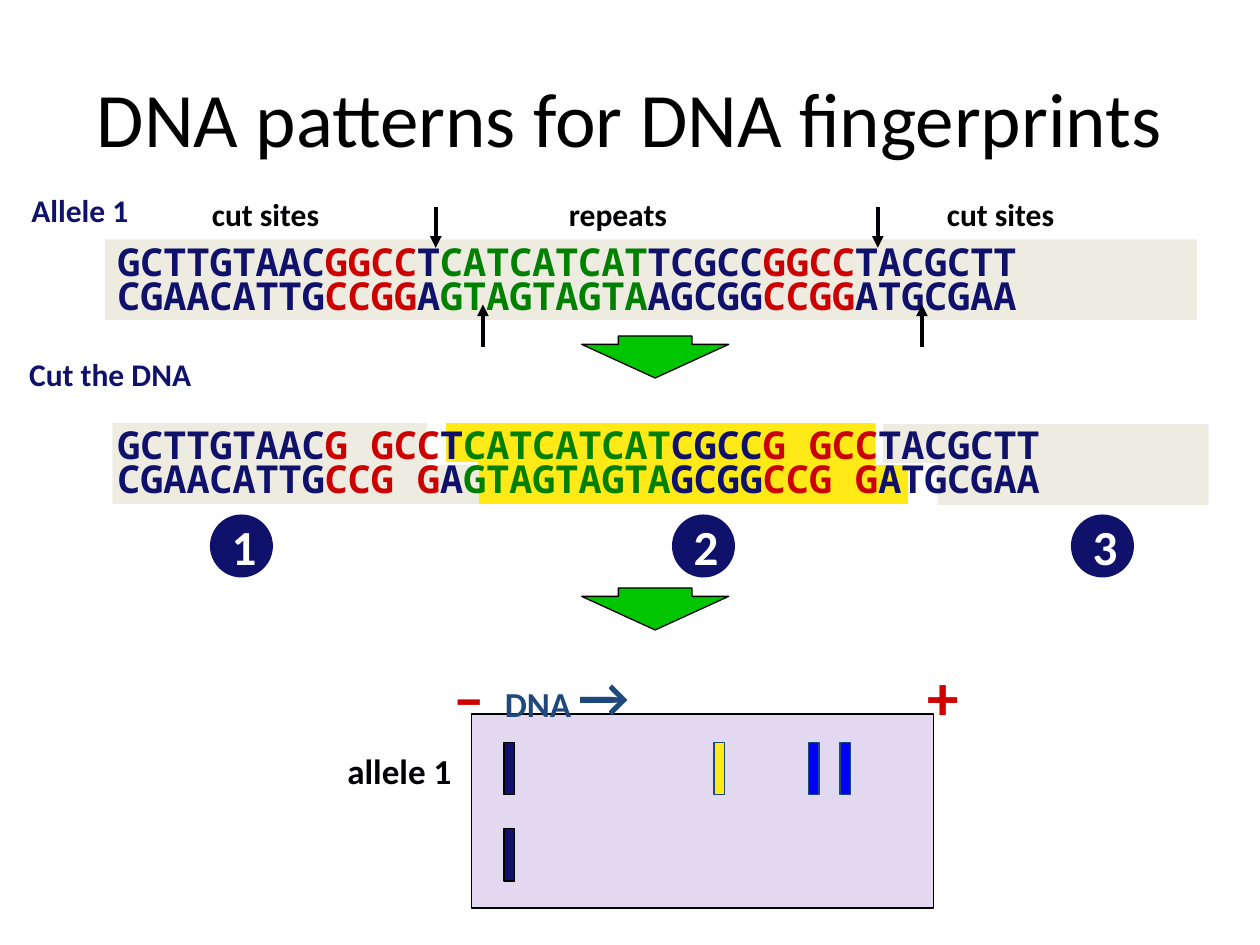
from lxml.etree import SubElement
from pptx import Presentation
from pptx.dml.color import RGBColor
from pptx.enum.shapes import MSO_CONNECTOR, MSO_SHAPE as SHAPE
from pptx.enum.text import MSO_ANCHOR, MSO_AUTO_SIZE as FIT, PP_ALIGN
from pptx.oxml.ns import qn
from pptx.util import Inches, Pt

COLS, ROWS = 120, 90
CELL = Inches(10) // COLS
NAVY, RED, GREEN, BLACK, BLUE = "0F116A", "CC0000", "008000", "000005", "1F497D"
WHITE, BEIGE, YELLOW = "FFFFFF", "EEECE1", "FFEA18"
STRAND_COLOURS = [NAVY, RED, NAVY, GREEN, NAVY, RED, NAVY]


def rgb(value):
    return RGBColor.from_string(value)


def grid(*units):
    return [round(u * CELL) for u in units]


def inside(box, x, y, w, h):
    return box[0] + x, box[1] + y, w, h


def add_run(p, text, size, colour, font="Calibri", bold=True):
    r = p.add_run()
    r.text = text
    r.font.size, r.font.name, r.font.bold = Pt(size), font, bold
    r.font.color.rgb = rgb(colour)


def frame(sp, wrap=True, fit=True):
    tf = sp.text_frame
    tf.word_wrap = wrap
    tf.auto_size = FIT.SHAPE_TO_FIT_TEXT if fit else FIT.NONE
    tf.vertical_anchor = MSO_ANCHOR.MIDDLE
    tf.paragraphs[0].alignment = PP_ALIGN.LEFT
    return tf


def add_shape(slide, box, fill, line=None, kind=SHAPE.RECTANGLE):
    sp = slide.shapes.add_shape(kind, *grid(*box))
    sp.shadow.inherit = False
    sp.fill.solid()
    sp.fill.fore_color.rgb = rgb(fill)
    if line:
        sp.line.color.rgb = rgb(line)
        sp.line.width = Pt(0.75)
    else:
        sp.line.fill.background()
    return sp


def add_label(slide, box, runs, wrap=True):
    tf = frame(slide.shapes.add_textbox(*grid(*box)), wrap)
    for text, size, colour in runs:
        add_run(tf.paragraphs[0], text, size, colour)


def add_heading(slide, box, text):
    tf = frame(add_shape(slide, box, WHITE), wrap=False)
    add_run(tf.paragraphs[0], text, 18, NAVY)


def add_strands(slide, box, strands):
    tf = frame(slide.shapes.add_textbox(*grid(*box)))
    for i, strand in enumerate(strands):
        p = tf.add_paragraph() if i else tf.paragraphs[0]
        p.line_spacing = 0.5
        p.space_after = Pt(0 if i else 6)
        for text, colour in zip(strand.split("|"), STRAND_COLOURS):
            add_run(p, text, 22, colour, "Noto Sans Mono")


def add_cut(slide, x, start, end):
    c = slide.shapes.add_connector(MSO_CONNECTOR.STRAIGHT, *grid(x, start, x, end))
    c.line.color.rgb = rgb(BLACK)
    c.line.width = Pt(2.25)
    SubElement(c.line._get_or_add_ln(), qn("a:tailEnd"), type="triangle")
    SubElement(c._element.spPr, qn("a:effectLst"))


def add_step_arrow(slide, box):
    sp = add_shape(slide, box, "00C602", "000000", SHAPE.DOWN_ARROW)
    sp.adjustments[0], sp.adjustments[1] = 0.5, 0.8


def add_title(slide, box, text):
    title = slide.shapes.title
    title.left, title.top, title.width, title.height = grid(*box)
    tf = frame(title, fit=False)
    p = tf.paragraphs[0]
    p.alignment = PP_ALIGN.CENTER
    add_run(p, text, 44, "000000", bold=False)


def add_allele(slide, box):
    add_heading(slide, inside(box, 0, 0, 16.4, 6), "Allele 1")
    add_shape(slide, inside(box, 8.2, 5.8, 104, 7.7), BEIGE)
    add_strands(slide, inside(box, 8.2, 7, 105, 6.6), [
        "GCTTGTAAC|GGCC|T|CATCATCAT|TCGCC|GGCC|TACGCTT",
        "CGAACATTG|CCGG|A|GTAGTAGTA|AGCGG|CCGG|ATGCGAA"])
    for x, w, text in [(17.2, 17, "cut sites"), (51.2, 15, "repeats"),
                       (87.2, 15, "cut sites")]:
        add_label(slide, inside(box, x, 1, w, 4.8), [(text, 18, BLACK)])
    top, bottom = (box[1] + 2.7, box[1] + 6.6), (box[1] + 16, box[1] + 12)
    for x, ends in [(39.7, top), (44.2, bottom), (81.8, top), (86, bottom)]:
        add_cut(slide, box[0] + x, *ends)


def add_fragments(slide, box):
    add_heading(slide, inside(box, 0, 0, 25.9, 6), "Cut the DNA")
    full, half, upper, lower = 7.7, 3.7, 7.7, 11.7
    for x, y, w, h, fill in [
            (43.9, upper, 37.9, full, YELLOW), (40.9, upper, 9.1, half, YELLOW),
            (75.7, lower, 9.2, half, YELLOW), (9.1, upper, 30, full, BEIGE),
            (29, lower, 15, half, BEIGE), (87.7, upper + 0.1, 25.8, full, BEIGE),
            (82.5, upper + 0.1, 15.5, half, BEIGE)]:
        add_shape(slide, inside(box, x, y, w, h), fill)
    add_strands(slide, inside(box, 8.4, 8.8, 105, 6.6), [
        "GCTTGTAAC|G GCC|T|CATCATCAT|CGCC|G GCC|TACGCTT",
        "CGAACATTG|CCG G|A|GTAGTAGTA|GCGG|CCG G|ATGCGAA"])
    for number, x in enumerate([18.4, 62.4, 100.4], 1):
        sp = add_shape(slide, inside(box, x, 16.4, 6, 6), NAVY, kind=SHAPE.OVAL)
        add_run(frame(sp, wrap=False, fit=False).paragraphs[0], str(number), 28, WHITE)


def add_gel(slide, box):
    add_shape(slide, box, "E2D8EF", "000000")
    for x, y, fill, line in [
            (3.1, 10.9, NAVY, "000000"), (3.1, 2.7, NAVY, "000000"),
            (23.1, 2.7, YELLOW, BLUE), (32.1, 2.7, "0000FF", BLUE),
            (35.1, 2.7, "0000FF", BLUE)]:
        add_shape(slide, inside(box, x, y, 1, 5), fill, line)
    add_label(slide, inside(box, 2, -5.6, 16.1, 7.6),
              [("DNA", 20, BLUE), (" ", 18, BLUE), ("→", 32, BLUE)], wrap=False)
    for x, sign in [(-2.9, "–"), (42.3, "+")]:
        add_label(slide, inside(box, x, -6, 5.8, 8.4), [(sign, 36, RED)])
    add_label(slide, inside(box, -13, 2.8, 13.6, 5.2),
              [("allele 1", 20, BLACK)], wrap=False)


def main():
    prs = Presentation()
    prs.slide_width, prs.slide_height = COLS * CELL, ROWS * CELL
    slide = prs.slides.add_slide(prs.slide_layouts[5])
    add_title(slide, (6, 3.6, 108, 15), "DNA patterns for DNA fingerprints")
    add_allele(slide, (1.8, 17, 114, 17))
    add_fragments(slide, (1.6, 32.6, 114, 23))
    for y in (32, 56):
        add_step_arrow(slide, (55.4, y, 14, 4))
    add_gel(slide, (44.9, 68, 44, 18.5))
    prs.save("out.pptx")


if __name__ == "__main__":
    main()
